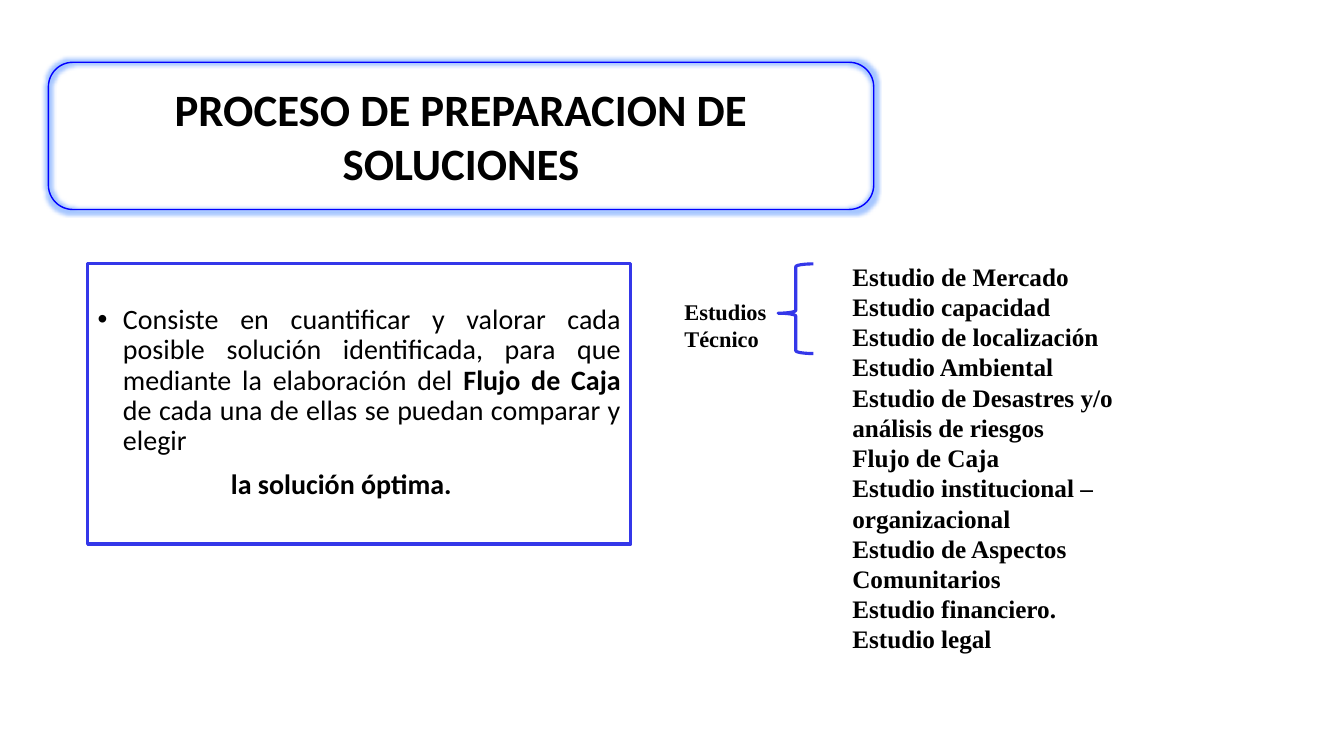
from lxml.etree import SubElement
from pptx import Presentation
from pptx.dml.color import RGBColor
from pptx.enum.shapes import MSO_SHAPE
from pptx.enum.text import MSO_ANCHOR, PP_ALIGN
from pptx.oxml.ns import qn
from pptx.util import Cm, Pt

BLACK = RGBColor(0x00, 0x00, 0x00)
TITLE_BLUE = RGBColor(0x00, 0x00, 0xFF)
FRAME_BLUE = RGBColor(0x34, 0x37, 0xE9)
GLOW_BLUE = RGBColor(0x3B, 0x82, 0xFF)

STUDIES = [
    "Estudio de Mercado",
    "Estudio capacidad",
    "Estudio de localización",
    "Estudio Ambiental",
    "Estudio de Desastres y/o análisis de riesgos",
    "Flujo de Caja",
    "Estudio institucional – organizacional",
    "Estudio de Aspectos Comunitarios",
    "Estudio financiero.",
    "Estudio legal",
]


def set_font(font, name, size, bold=None):
    font.name = name
    font.size = Pt(size)
    font.bold = bold
    font.color.rgb = BLACK


def add_outline(slide, kind, box, color, weight):
    outline = slide.shapes.add_shape(kind, *[Cm(length) for length in box])
    outline.shadow.inherit = False
    outline.fill.background()
    outline.line.color.rgb = color
    outline.line.width = Pt(weight)
    return outline


def add_lines(slide, box, lines, size):
    text_box = slide.shapes.add_textbox(*[Cm(length) for length in box])
    frame = text_box.text_frame
    frame.word_wrap = True
    frame.text = "\n".join(lines)
    for paragraph in frame.paragraphs:
        set_font(paragraph.font, "Times New Roman", size, True)


def add_title(slide, box):
    title = add_outline(slide, MSO_SHAPE.FLOWCHART_ALTERNATE_PROCESS, box, TITLE_BLUE, 1)

    # Soft glow around the frame
    effects = title.element.spPr.find(qn("a:effectLst"))
    glow = SubElement(effects, qn("a:glow"), rad="63500")
    glow_color = SubElement(glow, qn("a:srgbClr"), val=str(GLOW_BLUE))
    SubElement(glow_color, qn("a:alpha"), val="45000")

    frame = title.text_frame
    frame.word_wrap = True
    frame.vertical_anchor = MSO_ANCHOR.MIDDLE
    frame.text = "PROCESO DE PREPARACION DE SOLUCIONES"
    heading = frame.paragraphs[0]
    heading.alignment = PP_ALIGN.CENTER
    set_font(heading.font, "Calibri", 32, True)


def add_definition(slide, box):
    definition = add_outline(slide, MSO_SHAPE.RECTANGLE, box, FRAME_BLUE, 2.25)
    frame = definition.text_frame
    frame.word_wrap = True
    frame.vertical_anchor = MSO_ANCHOR.TOP
    frame.margin_top = Cm(1.05)

    # Bulleted explanation
    explanation = frame.paragraphs[0]
    bullet_properties = explanation._p.get_or_add_pPr()
    bullet_properties.set("marL", str(Cm(0.64)))
    bullet_properties.set("indent", str(-Cm(0.64)))
    SubElement(bullet_properties, qn("a:buFont"), typeface="Arial")
    SubElement(bullet_properties, qn("a:buChar"), char="•")
    explanation.alignment = PP_ALIGN.JUSTIFY
    explanation.line_spacing = 0.9
    set_font(explanation.font, "Calibri", 20)
    explanation.add_run().text = (
        "Consiste en cuantificar y valorar cada posible solución identificada, "
        "para que mediante la elaboración del "
    )
    cash_flow = explanation.add_run()
    cash_flow.text = "Flujo de Caja"
    cash_flow.font.bold = True
    explanation.add_run().text = " de cada una de ellas se puedan comparar y elegir"

    # Indented conclusion
    conclusion = frame.add_paragraph()
    conclusion.text = "la solución óptima."
    conclusion._p.get_or_add_pPr().set("marL", str(Cm(3.36)))
    conclusion.alignment = PP_ALIGN.LEFT
    conclusion.line_spacing = 0.9
    conclusion.space_before = Pt(10)
    set_font(conclusion.font, "Calibri", 20, True)


def add_studies(slide, box):
    left, top, width, height = box
    list_offset = 4.23

    # Label and brace
    add_lines(slide, (left, top + 0.94, 2.87, 1.63), ["Estudios", "Técnico"], 16)
    brace_box = (left + 2.61, top + 0.2, 0.89, 2.26)
    brace = add_outline(slide, MSO_SHAPE.LEFT_BRACE, brace_box, FRAME_BLUE, 2.25)
    brace.adjustments[0] = 0.08
    brace.adjustments[1] = 0.55

    # List of studies
    list_box = (left + list_offset, top, width - list_offset, height)
    add_lines(slide, list_box, STUDIES, 18)


def main():
    presentation = Presentation()
    presentation.slide_width = Cm(33.87)
    presentation.slide_height = Cm(19.05)
    slide = presentation.slides.add_slide(presentation.slide_layouts[6])
    add_definition(slide, (2.21, 6.65, 13.69, 7.06))
    add_studies(slide, (17, 6.45, 12.4, 10.4))
    add_title(slide, (1.22, 1.57, 20.8, 3.71))
    presentation.save("out.pptx")


if __name__ == "__main__":
    main()
